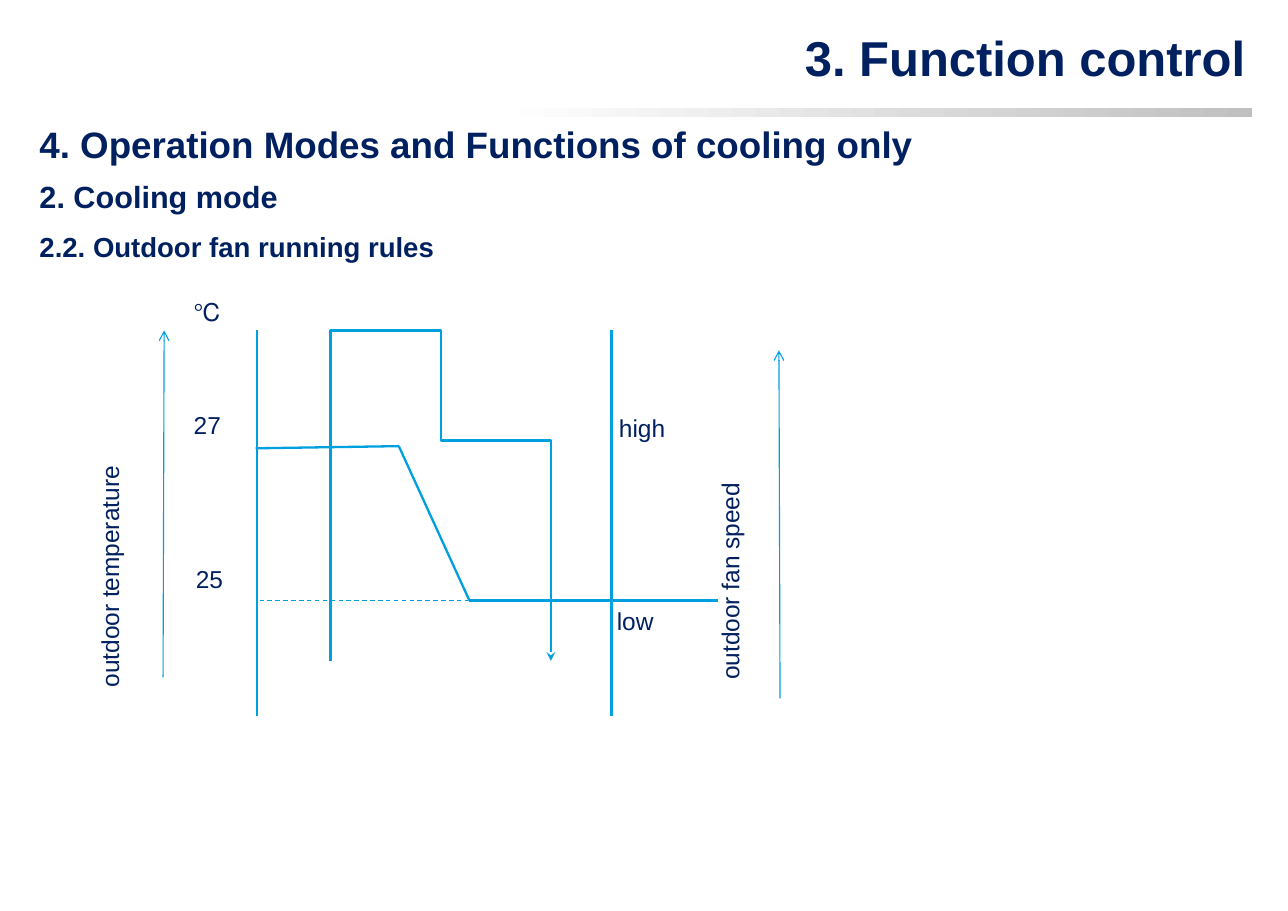
"""Build the slide on the running rules of the outdoor fan in cooling mode."""
from dataclasses import dataclass
from math import cos, pi, sin

from lxml import etree
from pptx import Presentation
from pptx.dml.color import RGBColor
from pptx.enum.dml import MSO_LINE
from pptx.enum.shapes import MSO_CONNECTOR, MSO_SHAPE
from pptx.enum.text import MSO_ANCHOR, MSO_AUTO_SIZE, PP_ALIGN
from pptx.oxml.ns import qn
from pptx.slide import Slide
from pptx.text.text import TextFrame
from pptx.util import Inches, Pt

STRAIGHT = MSO_CONNECTOR.STRAIGHT
RECTANGLE = MSO_SHAPE.RECTANGLE
DASH = MSO_LINE.DASH
TOP = MSO_ANCHOR.TOP
NO_AUTOFIT = MSO_AUTO_SIZE.NONE
LEFT, RIGHT = PP_ALIGN.LEFT, PP_ALIGN.RIGHT
TITLE_ONLY = 5
EMU_PER_INCH = 914400


@dataclass(frozen=True)
class Theme:
    font: str = "Arial"
    navy: RGBColor = RGBColor(0x00, 0x20, 0x60)
    blue: RGBColor = RGBColor(0x00, 0x9F, 0xDE)
    white: RGBColor = RGBColor(0xFF, 0xFF, 0xFF)
    silver: RGBColor = RGBColor(0xC0, 0xC0, 0xC0)
    title_size: int = 32
    label_size: int = 16
    thick: float = 1.5
    thin: float = 0.75


@dataclass(frozen=True)
class Box:
    left: float
    top: float
    width: float
    height: float

    def lengths(self) -> tuple:
        return tuple(Inches(v) for v in (self.left, self.top, self.width, self.height))


@dataclass(frozen=True)
class Text:
    words: str
    box: Box
    size: int
    bold: bool = False
    wrap: bool = True
    upward: bool = False
    space_after: int = 0


@dataclass(frozen=True)
class Line:
    start: tuple[float, float]
    end: tuple[float, float]
    width: float
    dashed: bool = False
    arrow: str = ""


THEME = Theme()
AXIS_TOP, AXIS_BOTTOM = 3, 6.5
TEMPERATURE_AXIS, SPEED_AXIS = 2.33, 5.55
HIGH_END, LOW_START = (3.62, 4.05), (4.26, 5.45)
LOW_LEVEL = LOW_START[1]


def heading(words: str, box: Box, size: int, wrap: bool = False) -> Text:
    return Text(words, box, size, bold=True, wrap=wrap)


def label(words: str, box: Box, upward: bool = False) -> Text:
    return Text(words, box, THEME.label_size, upward=upward, space_after=10)


TEXTS = [
    heading("4. Operation Modes and Functions of cooling only", Box(0.26, 1.06, 10.87, 0.5), 24, True),
    heading("2. Cooling mode", Box(0.26, 1.57, 2.48, 0.44), 20),
    heading("2.2. Outdoor fan running rules", Box(0.26, 2.04, 3.82, 0.4), 18),
    label("℃", Box(1.66, 2.65, 0.97, 1.05)),
    label("27", Box(1.66, 3.67, 0.97, 1.05)),
    label("25", Box(1.68, 5.07, 0.97, 1.05)),
    label("high", Box(5.52, 3.7, 1.07, 1.05)),
    label("low", Box(5.5, 5.45, 1.59, 1.05)),
    label("outdoor temperature", Box(0.81, 2.48, 0.97, 3.86), True),
    label("outdoor fan speed", Box(6.44, 2.89, 0.66, 3.38), True),
]

LINES = [
    Line((TEMPERATURE_AXIS, AXIS_TOP), (TEMPERATURE_AXIS, AXIS_BOTTOM), THEME.thick),
    Line((SPEED_AXIS, AXIS_TOP), (SPEED_AXIS, AXIS_BOTTOM), THEME.thick),
    Line((2.32, 4.07), HIGH_END, THEME.thick),
    Line(HIGH_END, LOW_START, THEME.thick),
    Line(LOW_START, (6.52, LOW_LEVEL), THEME.thick),
    Line(LOW_START, (TEMPERATURE_AXIS, LOW_LEVEL), THEME.thin, dashed=True),
    Line((1.48, 6.15), (1.49, 3), THEME.thin, arrow="arrow"),
    Line((7.08, 6.34), (7.07, 3.18), THEME.thin, arrow="arrow"),
]


def write(frame: TextFrame, text: Text, alignment: PP_ALIGN = LEFT) -> None:
    frame.word_wrap = text.wrap
    frame.auto_size = NO_AUTOFIT
    frame.vertical_anchor = TOP
    frame.text = text.words
    paragraph = frame.paragraphs[0]
    paragraph.alignment = alignment
    paragraph.space_after = Pt(text.space_after)
    font = paragraph.font
    font.name, font.size, font.bold = THEME.font, Pt(text.size), text.bold
    font.color.rgb = THEME.navy


def add_title(slide: Slide, text: Text) -> None:
    title = slide.shapes.title
    title.left, title.top, title.width, title.height = text.box.lengths()
    write(title.text_frame, text, RIGHT)


def add_text(slide: Slide, text: Text) -> None:
    shape = slide.shapes.add_textbox(*text.box.lengths())
    write(shape.text_frame, text)
    if text.upward:
        shape.element.txBody.bodyPr.set("vert", "vert270")


def add_arrowhead(shape, kind: str) -> None:
    outline = shape.line._get_or_add_ln()
    etree.SubElement(outline, qn("a:tailEnd"), type=kind)


def add_line(slide: Slide, line: Line) -> None:
    points = [Inches(v) for v in line.start + line.end]
    connector = slide.shapes.add_connector(STRAIGHT, *points)
    connector.line.color.rgb = THEME.blue
    connector.line.width = Pt(line.width)
    if line.dashed:
        connector.line.dash_style = DASH
    if line.arrow:
        add_arrowhead(connector, line.arrow)
    etree.SubElement(connector.element.spPr, qn("a:effectLst"))


def add_title_bar(slide: Slide, box: Box) -> None:
    bar = slide.shapes.add_shape(RECTANGLE, *box.lengths())
    bar.shadow.inherit = False
    bar.line.fill.background()
    bar.fill.gradient()
    bar.fill.gradient_angle = 0
    for stop, color in zip(bar.fill.gradient_stops, (THEME.white, THEME.silver)):
        stop.color.rgb = color


def add_arch(slide: Slide, box: Box, foot: float, steps: int = 60) -> None:
    radius = box.width / 2
    center, base = box.left + radius, box.top + box.height
    angles = [pi * step / steps for step in range(steps + 1)]
    points = [(center - radius * cos(a), base - box.height * sin(a)) for a in angles]
    builder = slide.shapes.build_freeform(box.left, base + foot, scale=EMU_PER_INCH)
    builder.add_line_segments(points, close=False)
    arch = builder.convert_to_shape()
    arch.shadow.inherit = False
    arch.fill.background()
    arch.line.color.rgb = THEME.blue
    arch.line.width = Pt(THEME.thick)
    add_arrowhead(arch, "stealth")


def main() -> None:
    presentation = Presentation()
    presentation.slide_width, presentation.slide_height = Inches(11.69), Inches(8.27)
    slide = presentation.slides.add_slide(presentation.slide_layouts[TITLE_ONLY])
    add_title_bar(slide, Box(4.51, 0.98, 6.85, 0.08))
    add_title(slide, heading("3. Function control", Box(7.18, 0.2, 4.23, 0.64), THEME.title_size))
    for line in LINES:
        add_line(slide, line)
    add_arch(slide, Box(2.85, 3, 2.11, 3.23), foot=0.05)
    for text in TEXTS:
        add_text(slide, text)
    presentation.save("out.pptx")


if __name__ == "__main__":
    main()
